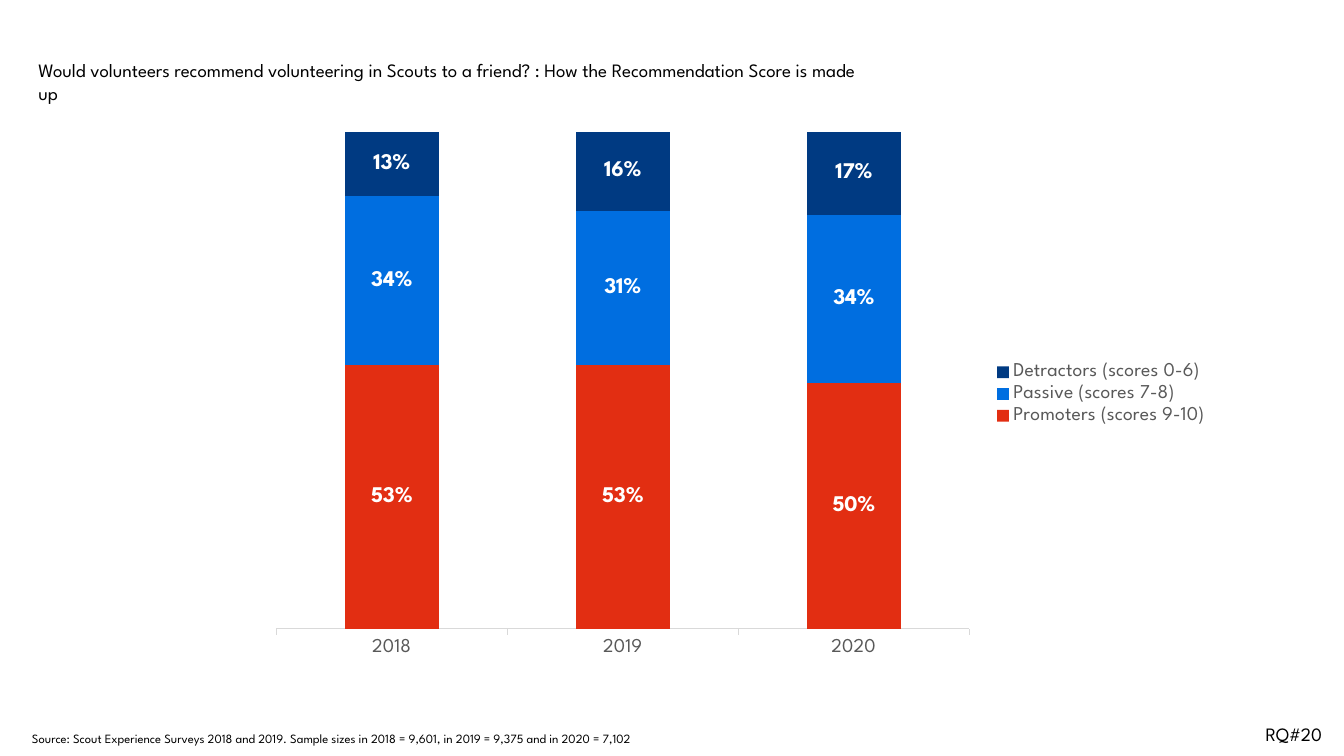
"""Build a slide showing how the recommendation score is made up, 2018 to 2020."""
from lxml.etree import SubElement
from pptx import Presentation
from pptx.chart.data import CategoryChartData
from pptx.dml.color import RGBColor
from pptx.enum.chart import XL_CHART_TYPE, XL_LABEL_POSITION, XL_LEGEND_POSITION, XL_TICK_LABEL_POSITION, XL_TICK_MARK
from pptx.oxml.ns import qn
from pptx.util import Pt

FONT = "League Spartan"
COLORS = {
    "black": "000000",
    "white": "FFFFFF",
    "grey": "595959",
    "axis": "D9D9D9",
    "red": "E22E12",
    "blue": "006EE0",
    "navy": "003A82",
}
SERIES = [
    ("Promoters (scores 9-10)", (0.53, 0.53, 0.50), "red"),
    ("Passive (scores 7-8)", (0.34, 0.31, 0.34), "blue"),
    ("Detractors (scores 0-6)", (0.13, 0.16, 0.17), "navy"),
]


def set_font(font, size, color, bold=False):
    font.name = FONT
    font.size = Pt(size)
    font.bold = bold
    font.color.rgb = RGBColor.from_string(COLORS[color])


def add_text(text, left, top, width, height, size=13.5, color="black", inset=(7.2, 3.6)):
    shape = slide.shapes.add_textbox(Pt(left), Pt(top), Pt(width), Pt(height))
    frame = shape.text_frame
    frame.word_wrap = True
    frame.margin_left = frame.margin_right = Pt(inset[0])
    frame.margin_top = frame.margin_bottom = Pt(inset[1])
    run = frame.paragraphs[0].add_run()
    run.text = text
    set_font(run.font, size, color)


presentation = Presentation()
presentation.slide_width = Pt(960)
presentation.slide_height = Pt(540)
slide = presentation.slides.add_slide(presentation.slide_layouts[6])

add_text(
    "Would volunteers recommend volunteering in Scouts to a friend? : How the Recommendation Score is made up",
    left=27.4, top=41.8, width=595, height=32.4, inset=(0, 0),
)
add_text("RQ#20", left=897, top=512.6, width=73, height=23.8)
add_text(
    "Source: Scout Experience Surveys 2018 and 2019. Sample sizes in 2018 = 9,601, in 2019 = 9,375 and in 2020 = 7,102",
    left=15.8, top=518.4, width=881, height=18, size=9,
)

chart_data = CategoryChartData(number_format="0%")
chart_data.categories = ["2018", "2019", "2020"]
for name, values, color in SERIES:
    chart_data.add_series(name, values)
chart = slide.shapes.add_chart(
    XL_CHART_TYPE.COLUMN_STACKED_100, Pt(183.6), Pt(86.4), Pt(687.6), Pt(390.2), chart_data
).chart
set_font(chart.font, 10, "black")
chart.has_title = False

plot = chart.plots[0]
plot.gap_width = 145
plot.overlap = 100
plot.vary_by_categories = False
for series, (name, values, color) in zip(plot.series, SERIES):
    series.format.fill.solid()
    series.format.fill.fore_color.rgb = RGBColor.from_string(COLORS[color])
    labels = series.data_labels
    labels.show_value = True
    labels.position = XL_LABEL_POSITION.CENTER
    labels.number_format = "0%"
    labels.number_format_is_linked = False
    set_font(labels.font, 16, "white", bold=True)

category_axis = chart.category_axis
category_axis.major_tick_mark = XL_TICK_MARK.OUTSIDE
category_axis.tick_label_position = XL_TICK_LABEL_POSITION.LOW
category_axis.format.line.width = Pt(0.75)
category_axis.format.line.color.rgb = RGBColor.from_string(COLORS["axis"])
set_font(category_axis.tick_labels.font, 14, "grey")

value_axis = chart.value_axis
value_axis.visible = False
value_axis.has_major_gridlines = False
value_axis.minimum_scale = 0
value_axis.maximum_scale = 1

chart.has_legend = True
chart.legend.position = XL_LEGEND_POSITION.RIGHT
chart.legend.include_in_layout = False
set_font(chart.legend.font, 14, "grey")

plot_area = chart.element.find(".//" + qn("c:plotArea"))
layout = plot_area.find(qn("c:layout"))
if layout is None:
    layout = SubElement(plot_area, qn("c:layout"))
    plot_area.insert(0, layout)
manual_layout = SubElement(layout, qn("c:manualLayout"))
for tag, value in [
    ("layoutTarget", "inner"), ("xMode", "edge"), ("yMode", "edge"),
    ("x", "0.02"), ("y", "0.02"), ("w", "0.72"), ("h", "0.91"),
]:
    SubElement(manual_layout, qn("c:" + tag)).set("val", value)

presentation.save("out.pptx")
